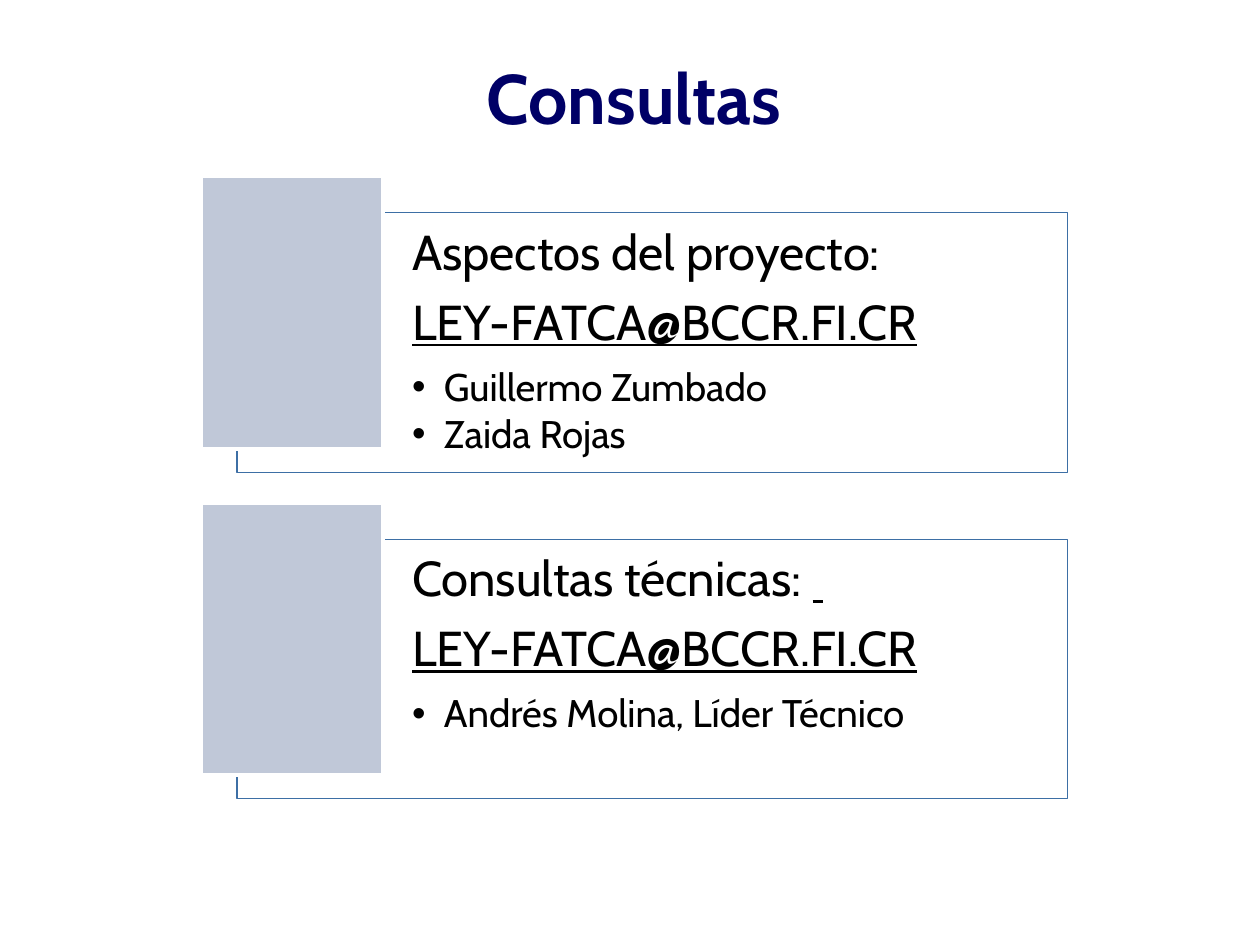
from lxml.etree import SubElement
from pptx import Presentation
from pptx.dml.color import RGBColor
from pptx.enum.shapes import MSO_SHAPE as SHAPE
from pptx.enum.text import MSO_ANCHOR as ANCHOR, MSO_AUTO_SIZE as FIT, PP_ALIGN as ALIGN
from pptx.oxml.ns import qn
from pptx.util import Cm, Pt

TITLE = "Consultas"
FONT = "Cabin"
EMAIL = "LEY-FATCA@BCCR.FI.CR"
CONTACTS = [
    {"heading": [("Aspectos del proyecto:", False)],
     "people": ["Guillermo\u00a0Zumbado", "Zaida Rojas"]},
    {"heading": [("Consultas técnicas:\u00a0", False), (" ", True)],
     "people": ["Andrés Molina, Líder Técnico"]},
]

FRAME_LEFT, FRAME_TOP, FRAME_W, FRAME_H = 4.78, 4.29, 16.74, 5.23
TILE_LEFT, TILE_TOP, TILE_W, TILE_H = 4.06, 3.56, 3.66, 5.49
PITCH = 6.58


def rgb(value):
    return RGBColor.from_string(value)


def style_run(p, text, size, color="000000", underline=False, bold=False):
    r = p.add_run()
    r.text = text
    r.font.name = FONT
    r.font.size = Pt(size)
    r.font.color.rgb = rgb(color)
    r.font.underline = underline
    r.font.bold = bold


def add_rect(shapes, box, fill, line, width):
    sp = shapes.add_shape(SHAPE.RECTANGLE, *map(Cm, box))
    sp.shadow.inherit = False
    sp.fill.solid()
    sp.fill.fore_color.rgb = rgb(fill)
    sp.line.color.rgb = rgb(line)
    sp.line.width = Pt(width)
    return sp


def set_alpha(sp, percent):
    color = sp._element.spPr.find(qn("a:solidFill"))[0]
    SubElement(color, qn("a:alpha")).set("val", str(percent * 1000))


def add_bullet(p):
    p.level = 1
    pPr = p._p.get_or_add_pPr()
    pPr.set("marL", str(Cm(0.64)))
    pPr.set("indent", str(-Cm(0.64)))
    SubElement(pPr, qn("a:buFont")).set("typeface", "Arial")
    SubElement(pPr, qn("a:buChar")).set("char", "•")


def add_text(shapes, box, contact):
    tf = shapes.add_textbox(*map(Cm, box)).text_frame
    tf.word_wrap = True
    tf.vertical_anchor = ANCHOR.TOP
    tf.margin_left = Cm(3.53)
    tf.margin_top = tf.margin_right = tf.margin_bottom = Cm(0.3)
    lines = [(contact["heading"], False), ([(EMAIL, True)], False)]
    lines += [([(person, False)], True) for person in contact["people"]]
    for i, (runs, bulleted) in enumerate(lines):
        p = tf.add_paragraph() if i else tf.paragraphs[0]
        if bulleted:
            add_bullet(p)
        p.alignment = ALIGN.LEFT
        p.line_spacing = 0.9
        p.space_after = Pt(3.3 if bulleted else 9.8)
        for text, underline in runs:
            style_run(p, text, 22 if bulleted else 28, underline=underline)


def add_contact(shapes, contact, offset):
    frame = (FRAME_LEFT, FRAME_TOP + offset, FRAME_W, FRAME_H)
    set_alpha(add_rect(shapes, frame, "FFFFFF", "3D6FA5", 0.75), 40)
    add_text(shapes, frame, contact)
    add_rect(shapes, (TILE_LEFT, TILE_TOP + offset, TILE_W, TILE_H), "C0C8D8", "FFFFFF", 2)


def add_title(s):
    title = s.shapes.title
    title.left, title.top, title.width, title.height = map(Cm, (1.96, 1.12, 21.64, 1.8))
    tf = title.text_frame
    tf.auto_size = FIT.NONE
    tf.vertical_anchor = ANCHOR.BOTTOM
    p = tf.paragraphs[0]
    p.alignment = ALIGN.CENTER
    style_run(p, TITLE, 40, "000066", bold=True)


def main():
    prs = Presentation()
    prs.slide_width, prs.slide_height = Cm(25.4), Cm(19.05)
    s = prs.slides.add_slide(prs.slide_layouts[5])
    add_title(s)
    shapes = s.shapes.add_group_shape().shapes
    for i, contact in enumerate(CONTACTS):
        add_contact(shapes, contact, i * PITCH)
    prs.save("out.pptx")


if __name__ == "__main__":
    main()
